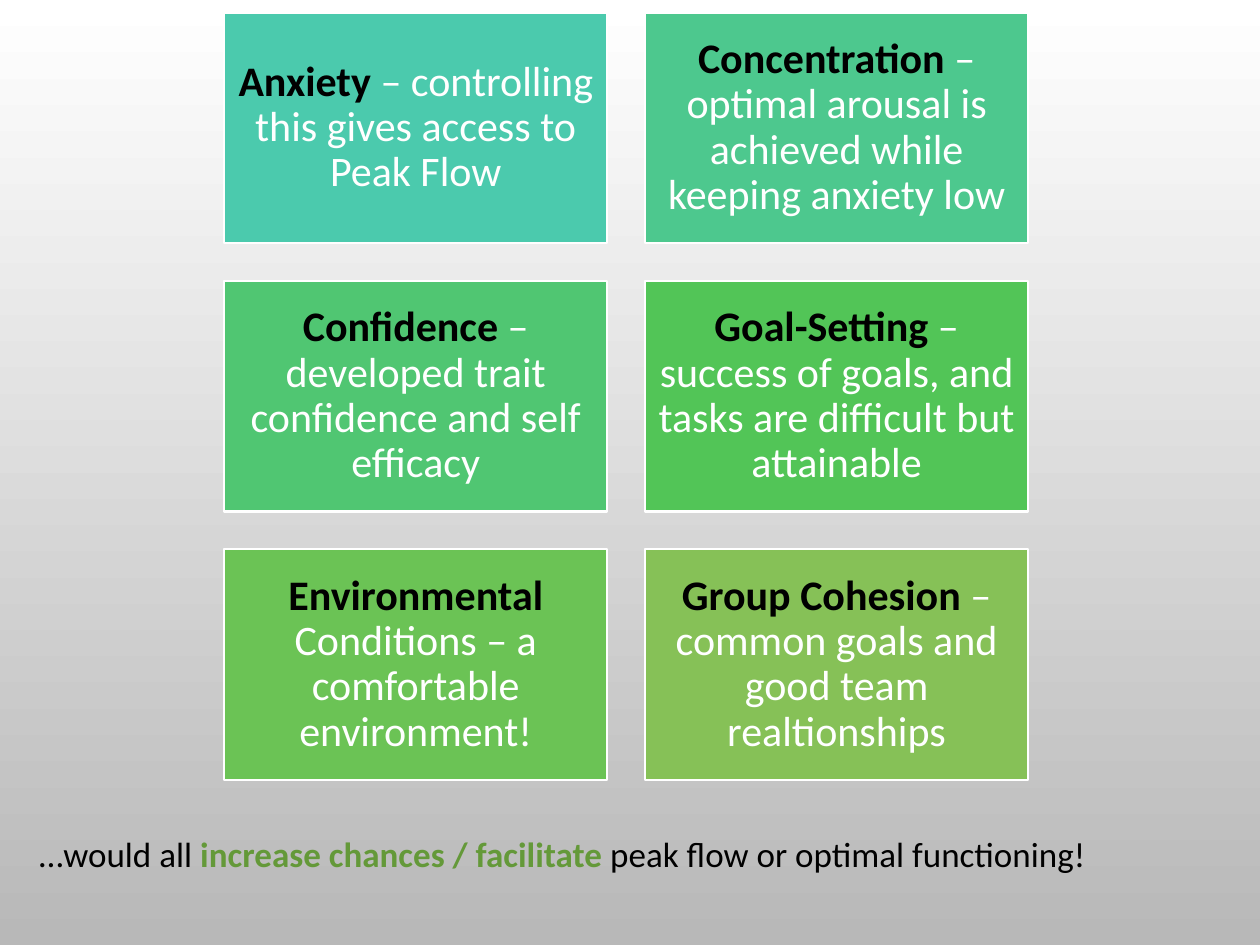
from dataclasses import dataclass

from pptx import Presentation
from pptx.dml.color import RGBColor
from pptx.enum import shapes, text
from pptx.util import Inches, Pt


@dataclass(frozen=True)
class Theme:
    font: str = "Calibri"
    card_size: int = 24
    note_size: int = 20
    dark: str = "000000"
    light: str = "FFFFFF"
    accent: str = "649939"
    bg_bottom: str = "B8B8B8"
    cards: tuple = ("4BCAAD", "4DC88E", "50C672", "52C557", "6BC355", "86C157")


THEME = Theme()

FACTORS = [
    ("Anxiety", " – controlling this gives access to Peak Flow"),
    ("Concentration ", "– optimal arousal is achieved while keeping anxiety low"),
    ("Confidence", " – developed trait confidence and self efficacy"),
    ("Goal-Setting ", "– success of goals, and tasks are difficult but attainable"),
    ("Environmental ", "Conditions – a comfortable environment!"),
    ("Group Cohesion ", "– common goals and good team realtionships"),
]

COLUMNS = 2
LEFT, TOP = 1.78, 0.1
CARD_W, CARD_H = 3.04, 1.83
GAP = 0.3


def rgb(value):
    return RGBColor.from_string(value)


def set_background(s):
    fill = s.background.fill
    fill.gradient()
    fill.gradient_angle = 270
    for stop, color in zip(fill.gradient_stops, (THEME.light, THEME.bg_bottom)):
        stop.color.rgb = rgb(color)


def set_insets(tf, horizontal, vertical):
    tf.margin_left = tf.margin_right = Inches(horizontal)
    tf.margin_top = tf.margin_bottom = Inches(vertical)


def add_runs(p, size, parts):
    """Add (wording, colour, bold) parts to a paragraph."""
    for wording, color, bold in parts:
        r = p.add_run()
        r.text = wording
        r.font.name = THEME.font
        r.font.size = Pt(size)
        r.font.bold = bold
        r.font.color.rgb = rgb(color)


def add_card(s, index, name, detail):
    row, column = divmod(index, COLUMNS)
    sp = s.shapes.add_shape(
        shapes.MSO_SHAPE.RECTANGLE,
        Inches(LEFT + column * (CARD_W + GAP)),
        Inches(TOP + row * (CARD_H + GAP)),
        Inches(CARD_W),
        Inches(CARD_H),
    )
    sp.shadow.inherit = False
    sp.fill.solid()
    sp.fill.fore_color.rgb = rgb(THEME.cards[index])
    sp.line.color.rgb = rgb(THEME.light)
    sp.line.width = Pt(1.25)

    tf = sp.text_frame
    tf.word_wrap = True
    tf.vertical_anchor = text.MSO_ANCHOR.MIDDLE
    set_insets(tf, 0.1, 0.1)
    p = tf.paragraphs[0]
    p.alignment = text.PP_ALIGN.CENTER
    p.line_spacing = 0.9
    add_runs(p, THEME.card_size,
             [(name, THEME.dark, True), (detail, THEME.light, False)])


def add_conclusion(s):
    sp = s.shapes.add_textbox(Inches(0.24), Inches(6.57), Inches(9.58), Inches(0.41))
    tf = sp.text_frame
    tf.word_wrap = True
    tf.auto_size = text.MSO_AUTO_SIZE.SHAPE_TO_FIT_TEXT
    set_insets(tf, 0.07, 0.04)
    add_runs(tf.paragraphs[0], THEME.note_size, [
        ("…would all ", THEME.dark, False),
        ("increase chances / facilitate", THEME.accent, True),
        (" peak flow or optimal functioning!", THEME.dark, False),
    ])


def main():
    prs = Presentation()
    prs.slide_width, prs.slide_height = Inches(10), Inches(7.5)
    s = prs.slides.add_slide(prs.slide_layouts[6])
    set_background(s)
    for index, (name, detail) in enumerate(FACTORS):
        add_card(s, index, name, detail)
    add_conclusion(s)
    prs.save("out.pptx")


if __name__ == "__main__":
    main()
